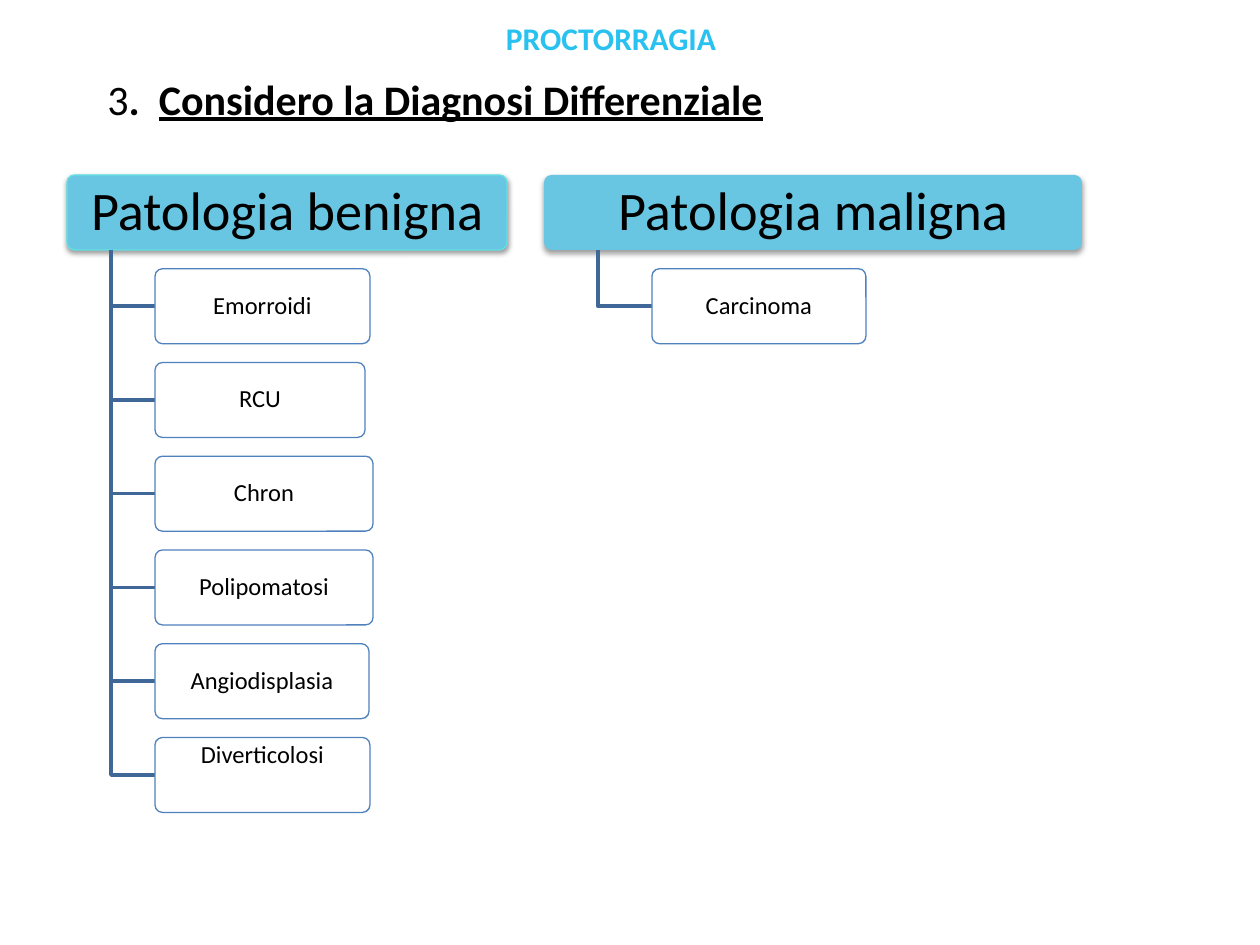
from lxml.etree import SubElement
from pptx import Presentation
from pptx.dml.color import RGBColor
from pptx.enum.shapes import MSO_SHAPE
from pptx.enum.text import MSO_ANCHOR, MSO_AUTO_SIZE, PP_ALIGN
from pptx.oxml.ns import qn
from pptx.util import Emu, Pt

EMU_PER_PX = 914400 / 126
FONT = "Calibri"
COLORS = {
    "title": "29C1EF",
    "text": "000000",
    "heading": "69C6E3",
    "heading_line": "62E1E3",
    "item": "FFFFFF",
    "item_line": "4F81BD",
    "branch": "3F6797",
}
HEADING_TOP = 175
BOX_HEIGHT = 75
ROW_PITCH = BOX_HEIGHT * 1.25

# Each branch: heading, left, width, line colour, item left, items (name, width, anchor)
BRANCHES = [
    ("Patologia benigna", 67, 440, "heading_line", 155, [
        ("Emorroidi", 215, MSO_ANCHOR.MIDDLE),
        ("RCU", 210, MSO_ANCHOR.MIDDLE),
        ("Chron", 218, MSO_ANCHOR.MIDDLE),
        ("Polipomatosi", 218, MSO_ANCHOR.MIDDLE),
        ("Angiodisplasia", 214, MSO_ANCHOR.MIDDLE),
        ("Diverticolosi", 215, MSO_ANCHOR.TOP),
    ]),
    ("Patologia maligna", 544, 538, None, 652, [
        ("Carcinoma", 214, MSO_ANCHOR.MIDDLE),
    ]),
]


def px(value):
    return Emu(round(value * EMU_PER_PX))


def color(name):
    return RGBColor.from_string(COLORS[name])


def format_run(run, size, color_name="text", bold=False, underline=False):
    font = run.font
    font.name = FONT
    font.size = Pt(size)
    font.bold = bold
    font.underline = underline
    font.color.rgb = color(color_name)


def add_title(slide):
    title = slide.shapes.title
    title.left, title.top, title.width, title.height = px(135), px(13), px(952), px(51)
    frame = title.text_frame
    frame.text = "PROCTORRAGIA"
    frame.word_wrap = True
    frame.auto_size = MSO_AUTO_SIZE.NONE
    frame.vertical_anchor = MSO_ANCHOR.TOP
    paragraph = frame.paragraphs[0]
    paragraph.alignment = PP_ALIGN.CENTER
    format_run(paragraph.runs[0], 18, "title", bold=True)


def add_subtitle(slide):
    frame = slide.shapes.add_textbox(px(95), px(67), px(1061), px(63)).text_frame
    frame.word_wrap = True
    paragraph = frame.paragraphs[0]
    for text, bold, underline in [
        ("3", False, False),
        (".  ", True, False),
        ("Considero la Diagnosi Differenziale", True, True),
    ]:
        run = paragraph.add_run()
        run.text = text
        format_run(run, 24, bold=bold, underline=underline)


def add_box(slide, text, left, top, width, fill, line, size, inset, anchor=MSO_ANCHOR.MIDDLE):
    shape = slide.shapes.add_shape(
        MSO_SHAPE.ROUNDED_RECTANGLE, px(left), px(top), px(width), px(BOX_HEIGHT))
    shape.adjustments[0] = 0.1
    shape.shadow.inherit = False
    shape.fill.solid()
    shape.fill.fore_color.rgb = color(fill)
    if line:
        shape.line.color.rgb = color(line)
        shape.line.width = Pt(0.75)
    else:
        shape.line.fill.background()
    frame = shape.text_frame
    frame.text = text
    frame.word_wrap = True
    frame.vertical_anchor = anchor
    frame.margin_left = frame.margin_right = px(inset)
    frame.margin_top = frame.margin_bottom = px(inset / 2)
    paragraph = frame.paragraphs[0]
    paragraph.alignment = PP_ALIGN.CENTER
    paragraph.line_spacing = 0.9
    format_run(paragraph.runs[0], size)
    return shape


def add_shadow(shape):
    effects = shape._element.spPr.find(qn("a:effectLst"))
    shadow = SubElement(effects, qn("a:outerShdw"), blurRad=str(Pt(3.1)),
                        dist=str(Pt(1.6)), dir="5400000", rotWithShape="0")
    black = SubElement(shadow, qn("a:srgbClr"), val="000000")
    SubElement(black, qn("a:alpha"), val="38000")


def add_elbow(slide, trunk_x, start_y, end_x, end_y):
    """Draw a line down the trunk and across to an item."""
    builder = slide.shapes.build_freeform(px(trunk_x), px(start_y))
    builder.add_line_segments(
        [(px(trunk_x), px(end_y)), (px(end_x), px(end_y))], close=False)
    elbow = builder.convert_to_shape()
    elbow.shadow.inherit = False
    elbow.fill.background()
    elbow.line.color.rgb = color("branch")
    elbow.line.width = Pt(2)


def add_branch(slide, heading, left, width, line, item_left, items):
    add_shadow(add_box(slide, heading, left, HEADING_TOP, width, "heading", line, 31, 8))
    trunk_x = left + width / 10
    for row, (name, item_width, anchor) in enumerate(items, start=1):
        top = HEADING_TOP + row * ROW_PITCH
        add_elbow(slide, trunk_x, HEADING_TOP + BOX_HEIGHT, item_left, top + BOX_HEIGHT / 2)
        add_box(slide, name, item_left, top, item_width, "item", "item_line", 14, 6, anchor)


def main():
    presentation = Presentation()
    presentation.slide_width, presentation.slide_height = px(1260), px(945)
    slide = presentation.slides.add_slide(presentation.slide_layouts[5])
    add_title(slide)
    add_subtitle(slide)
    for branch in BRANCHES:
        add_branch(slide, *branch)
    presentation.save("out.pptx")


if __name__ == "__main__":
    main()
